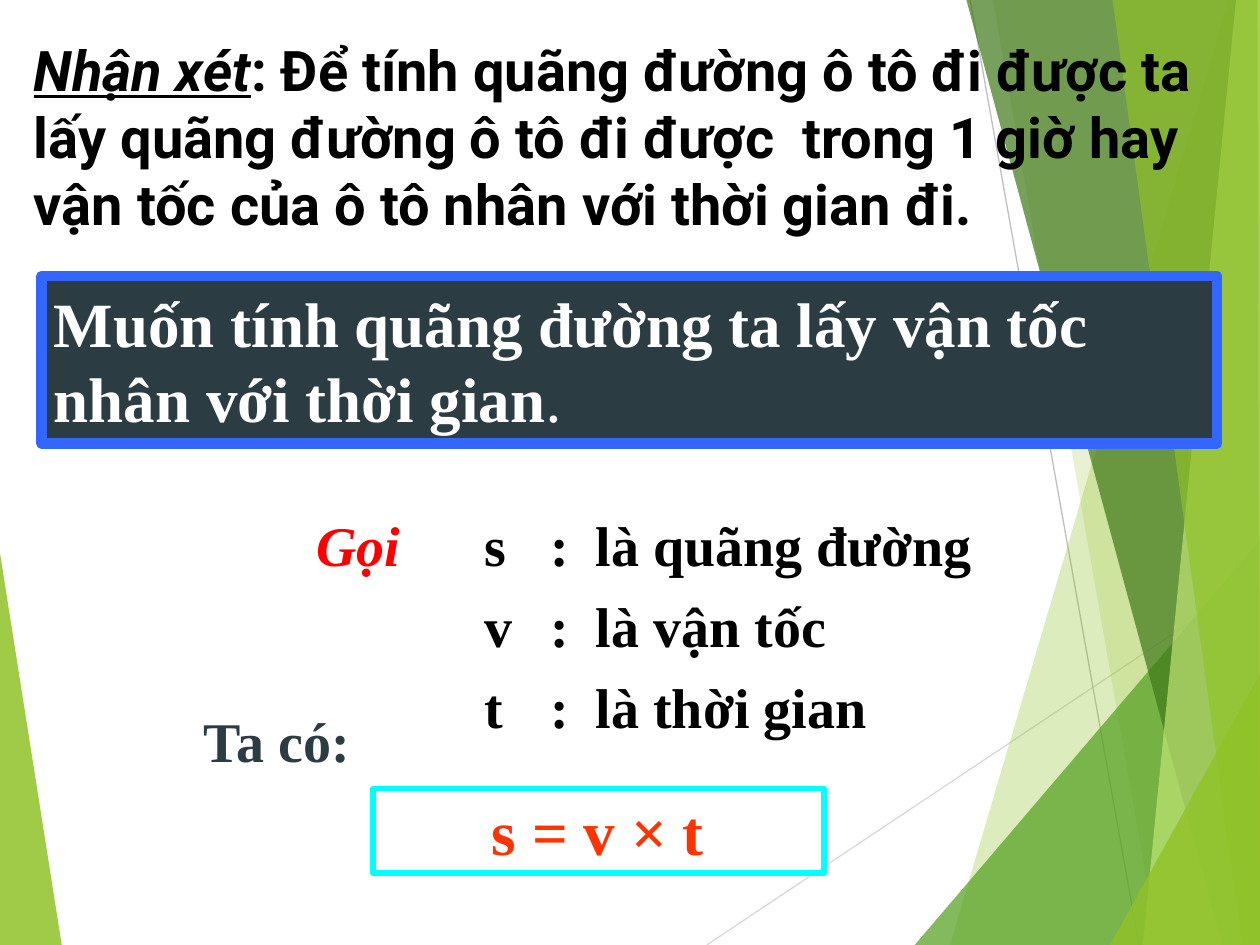
"""Builds a maths lesson slide on the distance formula, over green facets."""
from typing import NamedTuple

from lxml.etree import SubElement
from pptx import Presentation
from pptx.dml.color import RGBColor
from pptx.enum.shapes import MSO_CONNECTOR as CONN, MSO_SHAPE as SHAPE
from pptx.enum.text import MSO_ANCHOR as ANCHOR, MSO_AUTO_SIZE as AUTO, PP_ALIGN as ALIGN
from pptx.oxml.ns import qn
from pptx.util import Inches, Pt

SERIF = "Times New Roman"


class Facet(NamedTuple):
    points: list
    color: str
    alpha: int


class Ray(NamedTuple):
    start: tuple
    end: tuple
    color: str


RAYS = [
    Ray((5.61, 7.5), (10, 4.57), "D9D9D9"),
    Ray((7.7, 0), (9.04, 7.5), "BFBFBF"),
]
FACETS = [
    Facet([(0, 4.39), (0.49, 7.5), (0, 7.5)], "90C226", 85),
    Facet([(9.75, 0), (7.54, 7.5), (10, 7.5), (10, 0)], "90C226", 30),
    Facet([(7.88, 0), (9.19, 7.5), (10, 7.5), (10, 0)], "90C226", 20),
    Facet([(7.26, 7.5), (10, 4.29), (10, 7.5)], "54A021", 72),
    Facet([(7.67, 0), (9.7, 7.5), (10, 7.5), (10, 0)], "3F7819", 70),
    Facet([(9.81, 0), (9.07, 7.5), (10, 7.5), (10, 0)], "C0E474", 70),
    Facet([(8.83, 0), (9.86, 7.5), (10, 7.5), (9.98, 0)], "90C226", 65),
    Facet([(8.81, 7.5), (10, 5.35), (10, 7.5)], "90C226", 80),
]
SYMBOLS = [("s", "quãng đường"), ("v", "vận tốc"), ("t", "thời gian")]
SYMBOL_TABS = [0.89, 2.23, 2.75, 3.11]


def rgb(value: str) -> RGBColor:
    return RGBColor.from_string(value)


def draw_facet(s, facet: Facet) -> None:
    points = [(Inches(x), Inches(y)) for x, y in facet.points]
    builder = s.shapes.build_freeform(*points[0])
    builder.add_line_segments(points[1:], close=True)
    sp = builder.convert_to_shape()
    sp.shadow.inherit = False
    sp.line.fill.background()
    sp.fill.solid()
    sp.fill.fore_color.rgb = rgb(facet.color)
    clr = sp.fill._xPr.find(qn("a:solidFill"))[0]
    SubElement(clr, qn("a:alpha"), val=str(facet.alpha * 1000))


def draw_ray(s, ray: Ray) -> None:
    ends = [Inches(v) for v in ray.start + ray.end]
    line = s.shapes.add_connector(CONN.STRAIGHT, *ends)
    line.line.color.rgb = rgb(ray.color)
    line.line.width = Pt(0.75)
    SubElement(line._element.spPr, qn("a:effectLst"))


def add_frame(s, box: tuple, line: str, width: float, fill: str = ""):
    sp = s.shapes.add_shape(SHAPE.RECTANGLE, *map(Inches, box))
    sp.shadow.inherit = False
    sp.line.color.rgb = rgb(line)
    sp.line.width = Pt(width)
    if fill:
        sp.fill.solid()
        sp.fill.fore_color.rgb = rgb(fill)
    else:
        sp.fill.background()
    return sp


def add_box(s, box: tuple, grow: bool = True):
    tf = s.shapes.add_textbox(*map(Inches, box)).text_frame
    tf.word_wrap = True
    tf.auto_size = AUTO.SHAPE_TO_FIT_TEXT if grow else AUTO.NONE
    return tf


def next_paragraph(tf, align=ALIGN.LEFT):
    p = tf.paragraphs[0] if not tf.paragraphs[0].runs else tf.add_paragraph()
    p.alignment = align
    return p


def add_run(p, text: str, *, size: float = 32, color: str = "000000", font: str = SERIF,
            bold: bool = True, italic: bool = False, underline: bool = False) -> None:
    r = p.add_run()
    r.text = text
    r.font.size, r.font.name = Pt(size), font
    r.font.bold, r.font.italic, r.font.underline = bold, italic, underline
    r.font.color.rgb = rgb(color)


def set_tabs(p, stops: list) -> None:
    tabs = SubElement(p._p.get_or_add_pPr(), qn("a:tabLst"))
    for stop in stops:
        SubElement(tabs, qn("a:tab"), pos=str(Inches(stop)), algn="l")


def add_remark(s) -> None:
    p = next_paragraph(add_box(s, (0.17, 0.23, 9.5, 1.72)))
    add_run(p, "Nhận xét", font="Roboto", italic=True, underline=True)
    add_run(p, ": Để tính quãng đường ô tô đi được ta lấy quãng đường ô tô đi được  "
               "trong 1 giờ hay vận tốc của ô tô nhân với thời gian đi.", font="Roboto")


def add_rule(s) -> None:
    tf = add_frame(s, (0.33, 2.19, 9.33, 1.33), "3366FF", 6, "2C3C43").text_frame
    tf.word_wrap = True
    tf.vertical_anchor = ANCHOR.MIDDLE
    white = {"size": 36, "color": "FFFFFF"}
    add_run(next_paragraph(tf), "Muốn tính quãng đường ta lấy vận tốc", **white)
    p = next_paragraph(tf)
    add_run(p, "nhân với thời gian", **white)
    add_run(p, ".", bold=False, **white)


def add_symbols(s) -> None:
    tf = add_box(s, (1.52, 4, 6.62, 1.86), grow=False)
    for i, (symbol, meaning) in enumerate(SYMBOLS):
        p = next_paragraph(tf)
        p.space_after = Pt(8)
        set_tabs(p, SYMBOL_TABS if i == 0 else SYMBOL_TABS[1:])
        if i == 0:
            add_run(p, "\tGọi", color="FF0000", italic=True)
        add_run(p, f"\t{symbol}\t:\tlà {meaning}")


def add_formula(s) -> None:
    p = next_paragraph(add_box(s, (1.52, 5.62, 1.58, 0.59)))
    p.line_spacing = 0.9
    add_run(p, "Ta có:", color="2C3C43")
    add_frame(s, (2.96, 6.26, 3.58, 0.67), "00FFFF", 3)
    p = next_paragraph(add_box(s, (3.62, 6.24, 2.25, 0.71)), ALIGN.CENTER)
    add_run(p, "s = v × t", size=36, color="FF3300")


def main() -> None:
    prs = Presentation()
    prs.slide_width, prs.slide_height = Inches(10), Inches(7.5)
    s = prs.slides.add_slide(prs.slide_layouts[6])
    for ray in RAYS:
        draw_ray(s, ray)
    for facet in FACETS:
        draw_facet(s, facet)
    add_remark(s)
    add_rule(s)
    add_formula(s)
    add_symbols(s)
    prs.save("out.pptx")


if __name__ == "__main__":
    main()
